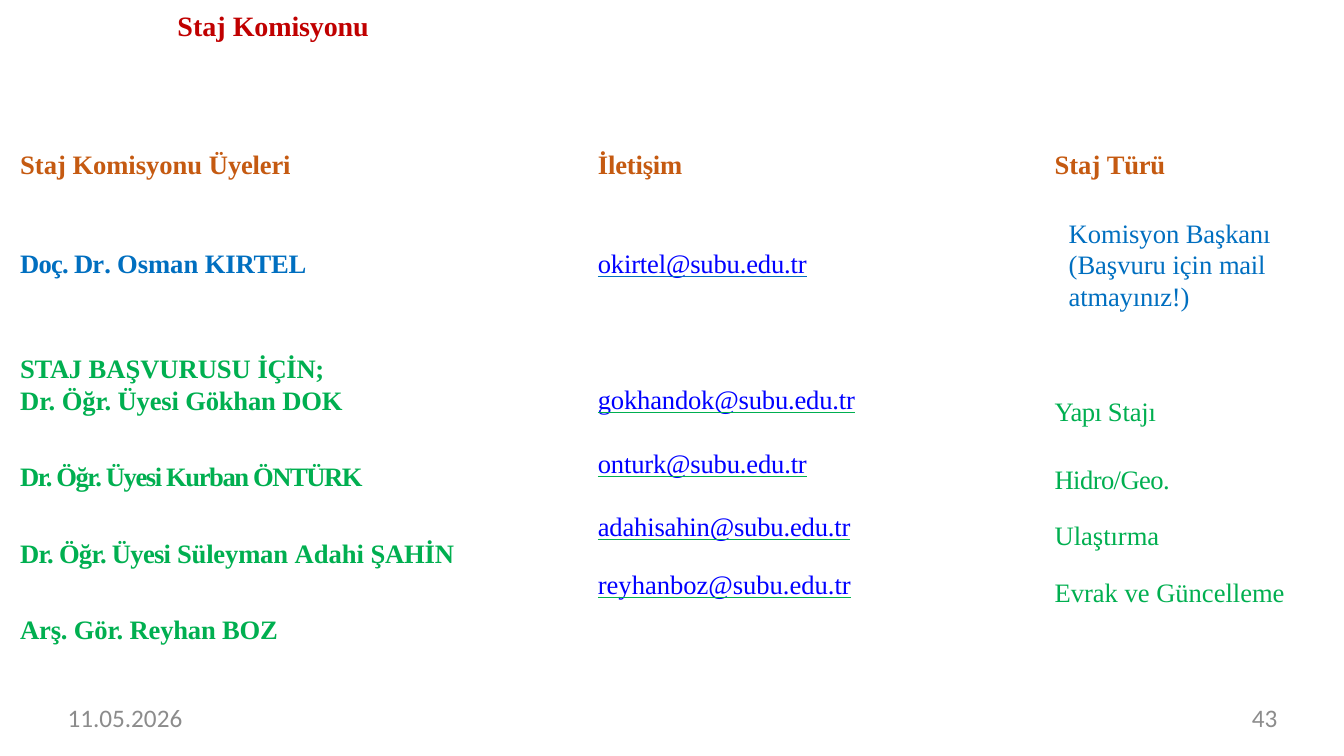
"""Build the internship commission slide."""
from dataclasses import dataclass

import lxml.etree
import pptx
import pptx.dml.color
import pptx.enum.text
import pptx.oxml.ns
import pptx.util

SCALE = 9144
COLOURS = {
    "title": "C00000",
    "header": "C55A11",
    "chair": "006FC0",
    "member": "00AF50",
    "mail": "0000FF",
    "footer": "8C8C8C",
}
SERIF = "Times New Roman"
PLAIN_STYLE = "{2D5ABB26-0587-4C30-8999-92F81FD0307C}"
COLUMNS = (528, 466, 306)
ROWS = (65, 135, 284)


@dataclass(frozen=True)
class Line:
    spans: tuple[tuple[str, float], ...]
    before: float = 0
    height: float | None = None


@dataclass(frozen=True)
class Entry:
    row: int
    column: int
    lines: tuple[Line, ...]
    colour: str
    left: int
    top: int = 0
    bold: bool = False
    underline: str | None = None


@dataclass(frozen=True)
class Label:
    place: tuple[int, int, int, int]
    line: Line
    size: int
    font: str
    colour: str
    top: int = 0
    left: int = 0
    bold: bool = False
    right: bool = False


def px(length: int) -> int:
    return pptx.util.Emu(length * SCALE)


def plain(text: str, before: float = 0, height: float | None = None) -> Line:
    return Line(((text, 0),), before, height)


def add_line(para, line: Line, *, size: int, font: str, colour: str,
             bold: bool = False, underline: str | None = None,
             right: bool = False) -> None:
    if line.before:
        para.space_before = pptx.util.Pt(line.before)
    if line.height:
        exact = line.height > 5
        para.line_spacing = pptx.util.Pt(line.height) if exact else line.height
    if right:
        para.alignment = pptx.enum.text.PP_ALIGN.RIGHT
    for text, spacing in line.spans:
        span = para.add_run()
        span.text = text
        span.font.size = pptx.util.Pt(size)
        span.font.name = font
        span.font.bold = bold
        span.font.color.rgb = pptx.dml.color.RGBColor.from_string(COLOURS[colour])
        properties = span.font._element
        if spacing:
            properties.set("spc", str(round(spacing * 100)))
        if underline:
            span.font.underline = True
            qn = pptx.oxml.ns.qn
            stroke = lxml.etree.Element(qn("a:uFill"))
            fill = lxml.etree.SubElement(stroke, qn("a:solidFill"))
            lxml.etree.SubElement(fill, qn("a:srgbClr"), val=COLOURS[underline])
            properties.find(qn("a:solidFill")).addnext(stroke)


def add_lines(frame, lines: tuple[Line, ...], **style) -> None:
    for index, line in enumerate(lines):
        para = frame.add_paragraph() if index else frame.paragraphs[0]
        add_line(para, line, **style)


def add_label(page, label: Label) -> None:
    box = page.shapes.add_textbox(*map(px, label.place))
    frame = box.text_frame
    frame.word_wrap = True
    frame.margin_left, frame.margin_top = px(label.left), px(label.top)
    frame.margin_right = frame.margin_bottom = 0
    add_lines(frame, (label.line,), size=label.size, font=label.font,
              colour=label.colour, bold=label.bold, right=label.right)


def add_members(page, entries: tuple[Entry, ...]) -> None:
    place = map(px, (17, 150, sum(COLUMNS), sum(ROWS)))
    table = page.shapes.add_table(len(ROWS), len(COLUMNS), *place).table
    table.first_row = table.horz_banding = False
    table._tbl.tblPr[0].text = PLAIN_STYLE
    for column, width in zip(table.columns, COLUMNS):
        column.width = px(width)
    for row, height in zip(table.rows, ROWS):
        row.height = px(height)
    for entry in entries:
        cell = table.cell(entry.row, entry.column)
        cell.fill.background()
        cell.margin_left, cell.margin_top = px(entry.left), px(entry.top)
        cell.margin_right = cell.margin_bottom = 0
        add_lines(cell.text_frame, entry.lines, size=19, font=SERIF,
                  colour=entry.colour, bold=entry.bold, underline=entry.underline)


ENTRIES = (
    Entry(0, 0, (Line((("Staj Komisyonu ", 0), ("Üyeleri", -0.1)), 0, 20.7),),
          "header", 3, bold=True),
    Entry(0, 1, (Line((("İletişim", -0.1),), 0, 20.7),), "header", 48, bold=True),
    Entry(0, 2, (Line((("Staj ", 0), ("Türü", -0.2)), 0, 20.7),),
          "header", 35, bold=True),
    Entry(1, 0, (Line((("Doç. Dr", -0.5), (". ", -0.3), ("Osman ", 0),
                       ("KIRTEL", -0.1))),),
          "chair", 3, 33, bold=True),
    Entry(1, 1, (Line((("okirtel@subu.edu.tr", -0.1),)),), "mail", 48, 33,
          underline="chair"),
    Entry(1, 2, (Line((("Komisyon ", 0), ("Başkanı ", -0.1), ("(Başvuru için ", 0),
                       ("mail ", -0.2), ("atmayınız!)", -0.1)), 0, 1.07),),
          "chair", 49, 1),
    Entry(2, 0, (
        Line((("STAJ ", -0.2), ("BAŞVURUSU ", 0), ("İÇİN;", -0.2)), 0, 22.4),
        Line((("Dr. ", 0), ("Öğr. Üyesi Gökhan DOK", -0.1)), 1.6),
        Line((("Dr. Öğr. Üyesi Kurban ÖNTÜRK", -1),), 5.9, 48.8),
        Line((("Dr. Öğr. Üyesi ", -0.5), ("Süleyman ", -0.1), ("Adahi ", 0),
              ("ŞAHİN", -0.1)), 5.9, 48.8),
        Line((("Arş. Gör. Reyhan BOZ", -0.1),), 5.9, 48.8),
    ), "member", 3, bold=True),
    Entry(2, 1, (
        Line((("gokhandok@subu.edu.tr", -0.1),)),
        Line((("onturk@subu.edu.tr", -0.1),), 24.4),
        Line((("adahisahin@subu.edu.tr", -0.1),), 24.2),
        plain("reyhanboz@subu.edu.tr", 20.3),
    ), "mail", 48, 33, underline="member"),
    Entry(2, 2, (
        Line((("Yapı ", -0.4), ("Stajı", -0.1)), 0, 48.7),
        Line((("Hidro/Geo.", -0.4),), 0, 48.7),
        plain("Ulaştırma", 17.9, 1.07),
        plain("Evrak ve Güncelleme", 17.9, 1.07),
    ), "member", 35, 6),
)

LABELS = (
    Label((175, 6, 672, 36), Line((("Staj ", 0), ("Komisyonu", -0.1))),
          20, SERIF, "title", top=2, left=1, bold=True),
    Label((960, 697, 307, 38), plain("43"), 18, "Calibri", "footer", right=True),
    Label((67, 697, 307, 30), plain("11.05.2026"), 18, "Calibri", "footer"),
)


def main() -> None:
    deck = pptx.Presentation()
    deck.slide_width, deck.slide_height = px(1333), px(750)
    page = deck.slides.add_slide(deck.slide_layouts[6])
    add_members(page, ENTRIES)
    for label in LABELS:
        add_label(page, label)
    deck.save("out.pptx")


if __name__ == "__main__":
    main()
